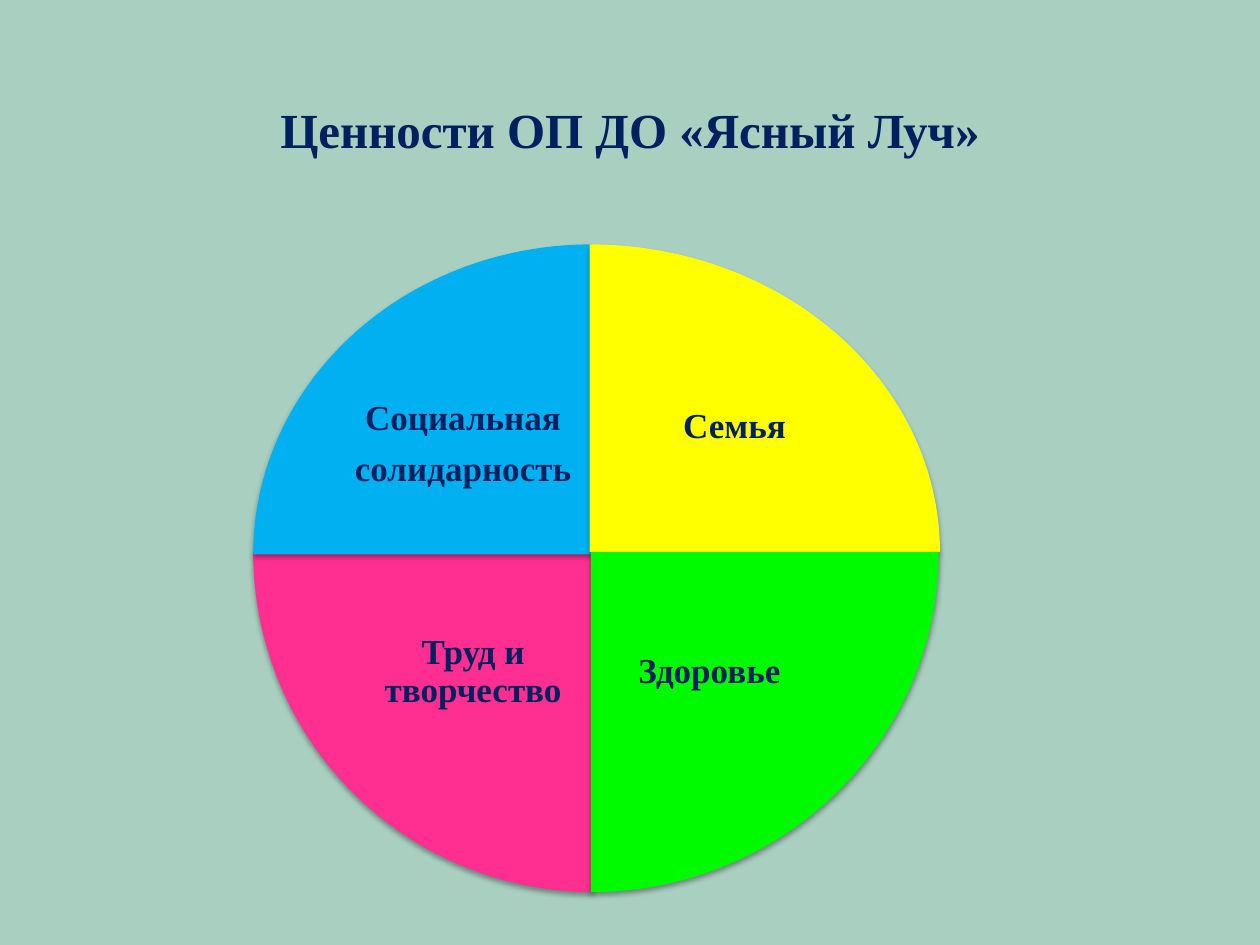
from lxml import etree
from pptx import Presentation
from pptx.dml.color import RGBColor
from pptx.enum import shapes, text
from pptx.oxml import ns
from pptx.util import Pt

BACKGROUND = RGBColor(0xA9, 0xCF, 0xC0)
NAVY = RGBColor(0x00, 0x20, 0x60)
PINK = RGBColor(0xFF, 0x2F, 0x92)
BLUE = RGBColor(0x00, 0xB0, 0xF0)
YELLOW = RGBColor(0xFF, 0xFF, 0x00)
GREEN = RGBColor(0x00, 0xFA, 0x00)
BLACK = RGBColor(0x00, 0x00, 0x00)

LABEL_FONT = {"name": "Times New Roman", "size": Pt(20), "bold": True}
TITLE_FONT = {**LABEL_FONT, "size": Pt(28)}
LABEL_FRAME = {
    "word_wrap": True,
    "vertical_anchor": text.MSO_ANCHOR.MIDDLE,
    "margin_left": Pt(10),
    "margin_right": Pt(10),
    "margin_top": Pt(10),
    "margin_bottom": Pt(10),
}
LABEL_PARAGRAPH = {
    "alignment": text.PP_ALIGN.CENTER,
    "line_spacing": 0.9,
    "space_after": Pt(8),
}


def apply_format(target, values):
    for attribute, value in values.items():
        setattr(target, attribute, value)


def add_soft_shadow(wedge):
    wedge.shadow.inherit = False
    effects = wedge._element.spPr.find(ns.qn("a:effectLst"))
    shadow = etree.SubElement(
        effects, ns.qn("a:outerShdw"), blurRad=str(Pt(3.1)),
        dist=str(Pt(1.8)), dir="5400000", rotWithShape="0")
    tint = etree.SubElement(shadow, ns.qn("a:srgbClr"), val=str(BLACK))
    etree.SubElement(tint, ns.qn("a:alpha"), val="35000")


prs = Presentation()
prs.slide_width, prs.slide_height = Pt(720), Pt(540)
slide = prs.slides.add_slide(prs.slide_layouts[5])
slide.background.fill.solid()
slide.background.fill.fore_color.rgb = BACKGROUND

heading = slide.shapes.title
apply_format(heading, {"left": Pt(36), "top": Pt(21.6), "width": Pt(648), "height": Pt(72.7)})
heading.text_frame.text = "Ценности ОП ДО «Ясный Луч»"
heading.text_frame.vertical_anchor = text.MSO_ANCHOR.BOTTOM
heading_line = heading.text_frame.paragraphs[0]
heading_line.alignment = text.PP_ALIGN.CENTER
apply_format(heading_line.font, TITLE_FONT)
heading_line.font.color.rgb = NAVY

values = [
    ("Труд и творчество", PINK, 270,
     (144.7, 315.4, 194.4, 194.4), (201.6, 315.4, 137.5, 137.5)),
    ("Социальная\nсолидарность", BLUE, 0,
     (144.7, 139.7, 193, 177.1), (191.5, 191.5, 146.2, 125.3)),
    ("Семья ", YELLOW, 90,
     (349.2, 127.4, 175.7, 200.2), (365.8, 207.4, 113, 73.4)),
    ("Здоровье ", GREEN, 180,
     (337.7, 315.4, 198.7, 194.4), (337.7, 315.4, 140.4, 137.5)),
]

for wording, colour, turn, wedge_box, label_box in values:
    quarter = slide.shapes.add_group_shape()
    wedge = quarter.shapes.add_shape(shapes.MSO_SHAPE.PIE_WEDGE, *map(Pt, wedge_box))
    wedge.rotation = turn
    wedge.fill.solid()
    wedge.fill.fore_color.rgb = colour
    wedge.line.fill.background()
    add_soft_shadow(wedge)

    label = quarter.shapes.add_textbox(*map(Pt, label_box))
    apply_format(label.text_frame, LABEL_FRAME)
    label.text_frame.text = wording
    for line in label.text_frame.paragraphs:
        apply_format(line, LABEL_PARAGRAPH)
        apply_format(line.font, LABEL_FONT)
        line.font.color.rgb = NAVY

prs.save("out.pptx")
